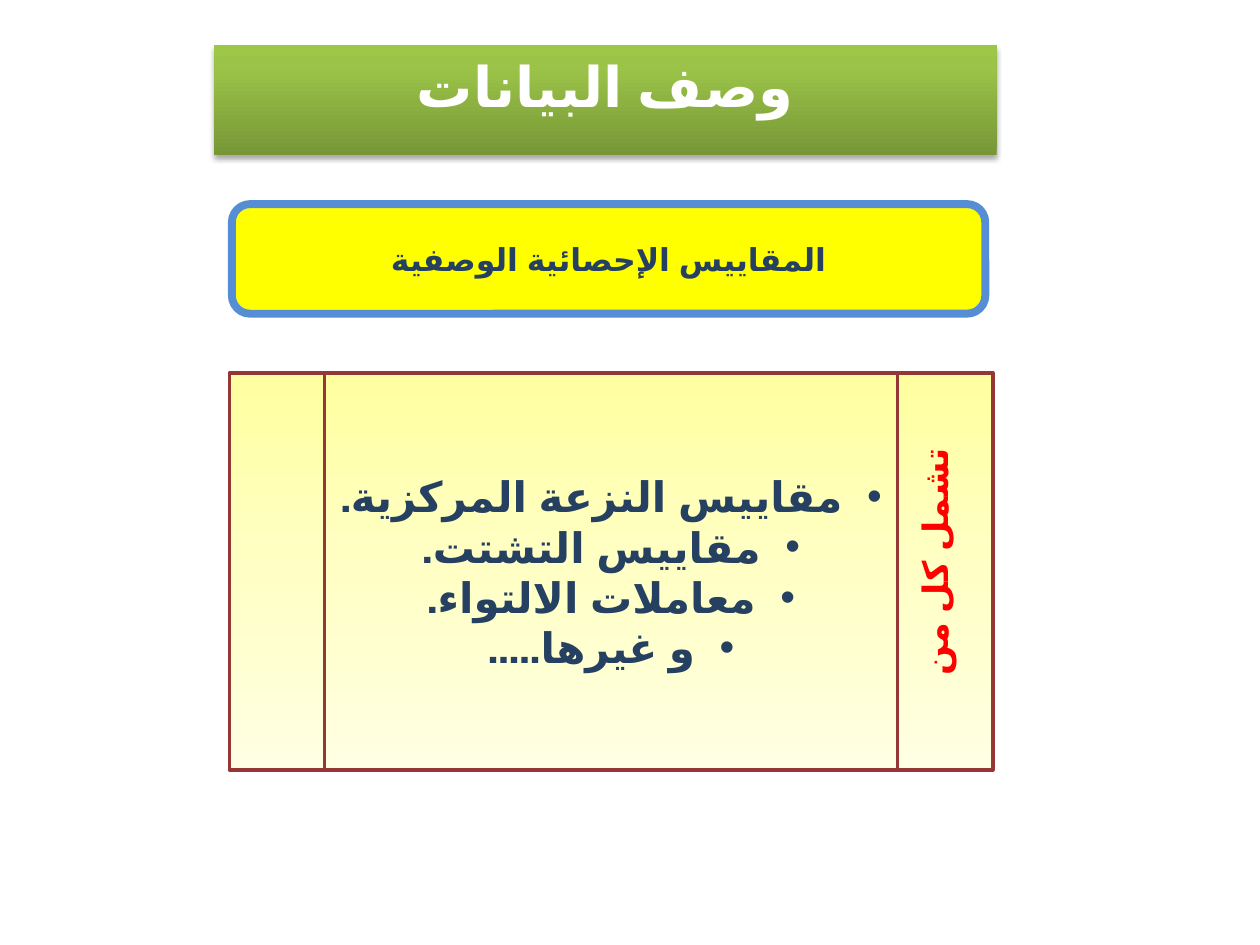
from dataclasses import dataclass

from lxml import etree
from pptx import Presentation
from pptx.dml.color import RGBColor
from pptx.enum import lang, shapes, text
from pptx.oxml import ns
from pptx.util import Inches, Pt


@dataclass(frozen=True)
class Theme:
    font: str = "Calibri"
    white: str = "FFFFFF"
    navy: str = "254061"
    red: str = "FF0000"
    yellow: str = "FFFF00"
    blue: str = "558ED5"
    maroon: str = "953735"
    shadow: str = "000000"
    green_grad: tuple = ((0, "779737"), (80, "9BC348"), (100, "9DC746"))
    cream_grad: tuple = ((0, "FFFFA0"), (50, "FFFFC5"), (100, "FFFFE3"))
    title_size: int = 32
    heading_size: int = 18
    list_size: int = 24
    label_size: int = 20


THEME = Theme()
BULLET_INDENT = Inches(0.31)


def add_xml(parent, tag, **attrs):
    return etree.SubElement(parent, ns.qn(tag), {k: str(v) for k, v in attrs.items()})


def set_gradient(sp, stops, angle):
    """Fill with (percent, colour) stops; angle is counter-clockwise."""
    sp.fill.gradient()
    sp.fill.gradient_angle = angle
    stop_list = sp.element.spPr.find(".//" + ns.qn("a:gsLst"))
    for old in list(stop_list):
        stop_list.remove(old)
    for percent, color in stops:
        stop = add_xml(stop_list, "a:gs", pos=percent * 1000)
        add_xml(stop, "a:srgbClr", val=color)


def set_shadow(sp):
    effects = sp.element.spPr.find(ns.qn("a:effectLst"))
    shadow = add_xml(effects, "a:outerShdw", blurRad=Pt(3.1), dist=Pt(1.8),
                     dir=90 * 60000, rotWithShape=0)
    color = add_xml(shadow, "a:srgbClr", val=THEME.shadow)
    add_xml(color, "a:alpha", val=35000)


def add_box(parent, kind, box, fill, line=None, width=0, angle=0):
    sp = parent.add_shape(kind, *map(Inches, box))
    sp.shadow.inherit = False
    if isinstance(fill, str):
        sp.fill.solid()
        sp.fill.fore_color.rgb = RGBColor.from_string(fill)
    else:
        set_gradient(sp, fill, angle)
    if line:
        sp.line.color.rgb = RGBColor.from_string(line)
        sp.line.width = Pt(width)
    else:
        sp.line.fill.background()
    return sp


def set_text(sp, content, size, color, anchor=text.MSO_ANCHOR.MIDDLE, bullets=False):
    """Write centred right-to-left paragraphs, one for each line of content."""
    tf = sp.text_frame
    tf.word_wrap = True
    tf.vertical_anchor = anchor
    tf.text = content
    for p in tf.paragraphs:
        p.alignment = text.PP_ALIGN.CENTER
        props = p._p.get_or_add_pPr()
        props.set("rtl", "1")
        if bullets:
            props.set("marL", str(BULLET_INDENT))
            props.set("indent", str(-BULLET_INDENT))
            add_xml(props, "a:buFont", typeface="Arial")
            add_xml(props, "a:buChar", char="•")
        for r in p.runs:
            r.font.name = THEME.font
            r.font.size = Pt(size)
            r.font.bold = True
            r.font.color.rgb = RGBColor.from_string(color)
            r.font.language_id = lang.MSO_LANGUAGE_ID.ARABIC


def add_vertical_label(parent, box, content):
    sp = parent.add_textbox(*map(Inches, box))
    set_text(sp, content, THEME.label_size, THEME.red, text.MSO_ANCHOR.TOP)
    sp.text_frame.auto_size = text.MSO_AUTO_SIZE.SHAPE_TO_FIT_TEXT
    sp.text_frame._txBody.bodyPr.set("vert", "vert270")


def main():
    prs = Presentation()
    prs.slide_width, prs.slide_height = Inches(10), Inches(7.5)
    s = prs.slides.add_slide(prs.slide_layouts[6])
    kinds = shapes.MSO_SHAPE

    # Title banner
    title = add_box(s.shapes, kinds.RECTANGLE, (1.7, 0.36, 6.21, 0.87),
                    THEME.green_grad, angle=90)
    set_shadow(title)
    set_text(title, "وصف البيانات", THEME.title_size, THEME.white, text.MSO_ANCHOR.TOP)

    # Heading
    heading = add_box(s.shapes, kinds.ROUNDED_RECTANGLE, (1.84, 1.62, 5.98, 0.87),
                      THEME.yellow, THEME.blue, 4.5)
    set_text(heading, "المقاييس الإحصائية الوصفية", THEME.heading_size, THEME.navy)

    # List of measures with its side label
    group = s.shapes.add_group_shape()
    measures = add_box(group.shapes, kinds.FLOWCHART_PREDEFINED_PROCESS,
                       (1.82, 2.96, 6.06, 3.15), THEME.cream_grad,
                       THEME.maroon, 2, angle=270)
    lines = ("مقاييس النزعة المركزية.", "مقاييس التشتت.",
             "معاملات الالتواء.", "و غيرها.....")
    set_text(measures, "\n".join(lines), THEME.list_size, THEME.navy, bullets=True)
    add_vertical_label(group.shapes, (7.2, 3.28, 0.54, 2.36), "تشمل كل من")

    prs.save("out.pptx")


if __name__ == "__main__":
    main()
